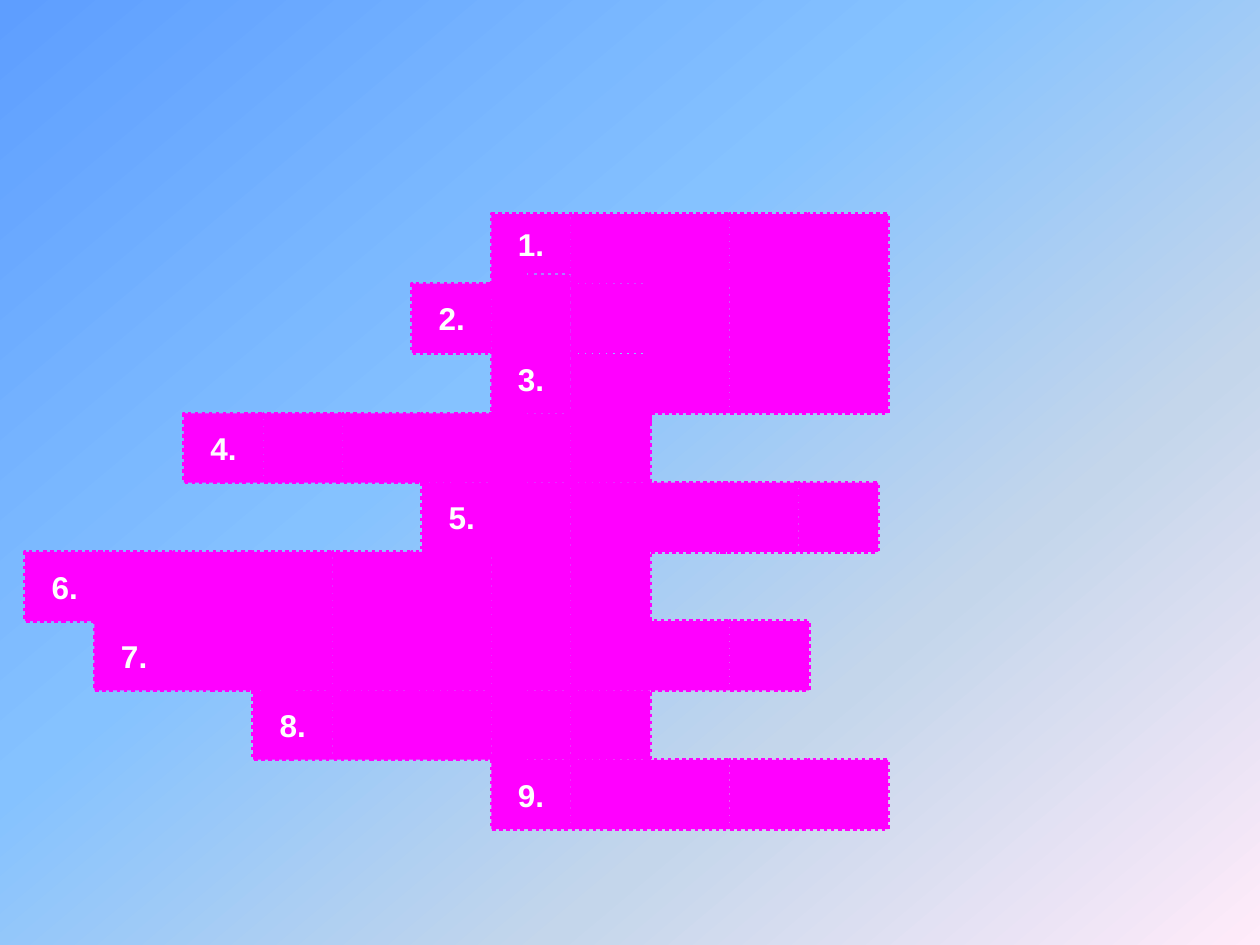
from copy import deepcopy
from dataclasses import dataclass

from pptx import Presentation
from pptx.dml.color import RGBColor
from pptx.enum.dml import MSO_LINE
from pptx.enum.shapes import MSO_SHAPE
from pptx.enum.text import MSO_ANCHOR, PP_ALIGN
from pptx.oxml.ns import qn
from pptx.slide import Slide
from pptx.util import Inches, Pt


@dataclass(frozen=True)
class Theme:
    cell: RGBColor = RGBColor(0xFF, 0x00, 0xFF)
    number: RGBColor = RGBColor(0xFF, 0xFF, 0xFF)
    font: str = "Arial"
    number_size: Pt = Pt(18)
    border: Pt = Pt(2)
    sky: tuple = ((0, "5E9EFF"), (40, "85C2FF"), (70, "C4D6EB"), (100, "FFEBFA"))
    sky_angle: int = 310  # counter-clockwise, i.e. 50 degrees clockwise


@dataclass(frozen=True)
class Strip:
    """Adjoining cells of one crossword row."""
    row: int
    left: float
    count: int
    numbered: bool = False
    drop: float = 0
    height: float = 0.55


THEME = Theme()
CELL_WIDTH, ROW_PITCH = 0.63, 0.55
FIRST_TOP, SECOND_TOP = 1.70, 2.18

STRIPS = (
    Strip(1, 3.90, 1, numbered=True, height=0.47),
    Strip(1, 4.53, 4),
    Strip(2, 3.90, 1),
    Strip(2, 3.27, 1, numbered=True, drop=0.07),
    Strip(2, 5.16, 3),
    Strip(2, 4.53, 1, drop=0.07),
    Strip(3, 3.90, 1, numbered=True),
    Strip(3, 5.16, 3),
    Strip(3, 4.53, 1, drop=0.08),
    Strip(4, 3.90, 2),
    Strip(4, 1.46, 4, numbered=True),
    Strip(5, 3.90, 3),
    Strip(5, 5.71, 2),
    Strip(5, 3.35, 1, numbered=True),
    Strip(6, 0.20, 1, numbered=True),
    Strip(6, 0.75, 7),
    Strip(7, 0.75, 9, numbered=True),
    Strip(8, 2.01, 5, numbered=True),
    Strip(9, 3.90, 5, numbered=True),
)


def paint_background(slide: Slide) -> None:
    fill = slide.background.fill
    fill.gradient()
    fill.gradient_angle = THEME.sky_angle
    stops = slide.element.find(".//" + qn("a:gsLst"))
    # Extend the default two stops to one per sky colour
    while len(stops) < len(THEME.sky):
        stops.append(deepcopy(stops[-1]))
    for stop, xml, (percent, color) in zip(fill.gradient_stops, stops, THEME.sky):
        stop.color.rgb = RGBColor.from_string(color)
        xml.set("pos", str(percent * 1000))


def add_cell(slide: Slide, left: float, top: float, height: float, number: str) -> None:
    cell = slide.shapes.add_shape(MSO_SHAPE.RECTANGLE, Inches(left), Inches(top),
                                  Inches(CELL_WIDTH), Inches(height))
    cell.shadow.inherit = False
    cell.fill.solid()
    cell.fill.fore_color.rgb = THEME.cell
    cell.line.color.rgb = THEME.cell
    cell.line.width = THEME.border
    cell.line.dash_style = MSO_LINE.ROUND_DOT
    if number:
        cell.text_frame.vertical_anchor = MSO_ANCHOR.MIDDLE
        paragraph = cell.text_frame.paragraphs[0]
        paragraph.alignment = PP_ALIGN.CENTER
        run = paragraph.add_run()
        run.text = number
        run.font.name = THEME.font
        run.font.size = THEME.number_size
        run.font.bold = True
        run.font.color.rgb = THEME.number


def add_strip(slide: Slide, strip: Strip) -> None:
    row_top = FIRST_TOP if strip.row == 1 else SECOND_TOP + (strip.row - 2) * ROW_PITCH
    for index in range(strip.count):
        number = f"{strip.row}." if strip.numbered and index == 0 else ""
        add_cell(slide, strip.left + index * CELL_WIDTH, row_top + strip.drop,
                 strip.height, number)


def main() -> None:
    presentation = Presentation()
    presentation.slide_width, presentation.slide_height = Inches(10), Inches(7.5)
    slide = presentation.slides.add_slide(presentation.slide_layouts[6])
    paint_background(slide)
    # Crossword grid
    for strip in STRIPS:
        add_strip(slide, strip)
    presentation.save("out.pptx")


if __name__ == "__main__":
    main()
